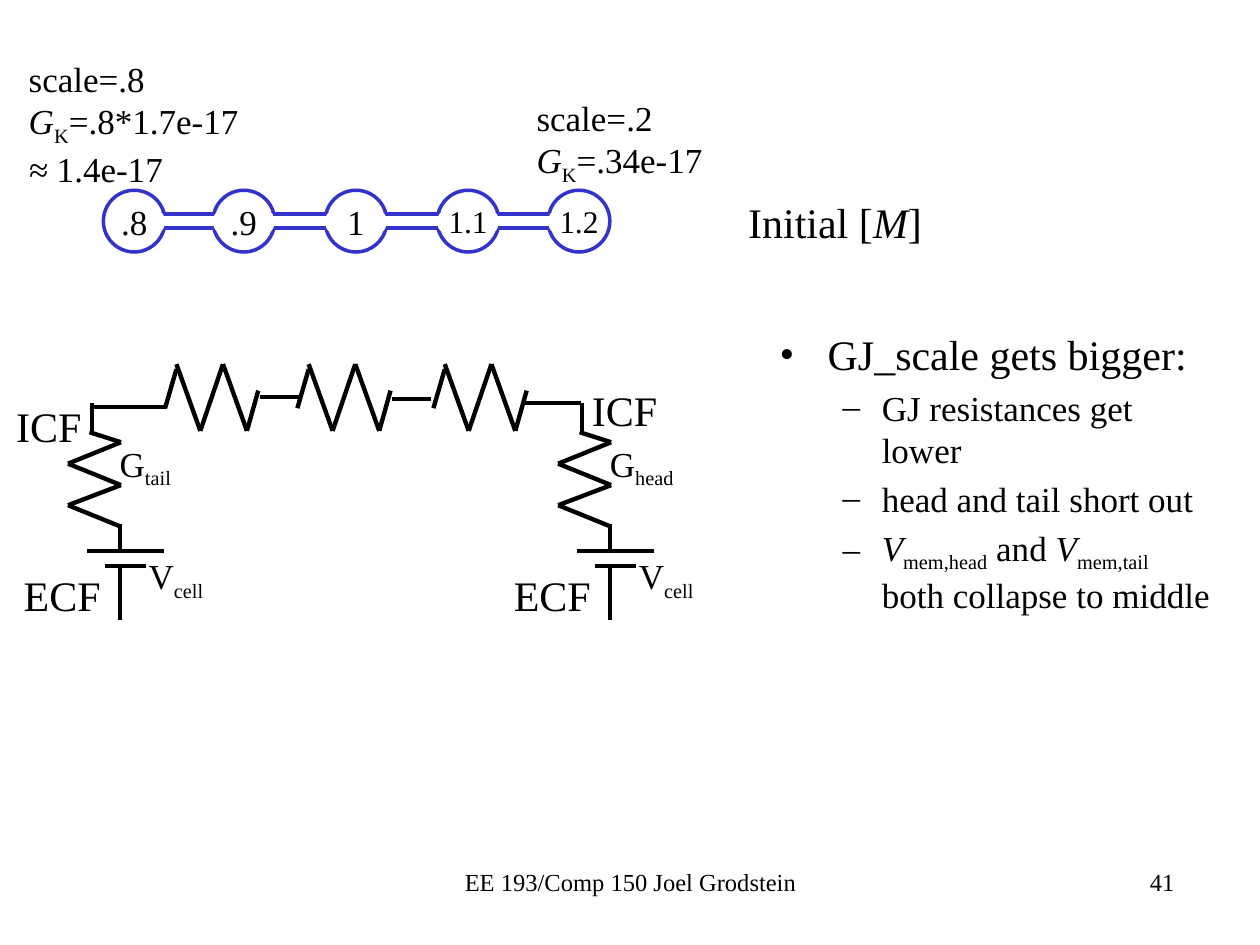
from dataclasses import dataclass
from itertools import pairwise

from lxml import etree
from pptx import Presentation
from pptx.dml.color import RGBColor
from pptx.enum.shapes import MSO_CONNECTOR, MSO_SHAPE
from pptx.enum.text import MSO_ANCHOR, PP_ALIGN
from pptx.oxml.ns import qn
from pptx.util import Inches, Pt

STRAIGHT = MSO_CONNECTOR.STRAIGHT
OVAL, RECTANGLE = MSO_SHAPE.OVAL, MSO_SHAPE.RECTANGLE
LEFT, CENTER, RIGHT = PP_ALIGN.LEFT, PP_ALIGN.CENTER, PP_ALIGN.RIGHT
MIDDLE = MSO_ANCHOR.MIDDLE

BLACK = RGBColor(0x00, 0x00, 0x00)
WHITE = RGBColor(0xFF, 0xFF, 0xFF)
BLUE = RGBColor(0x33, 0x33, 0xCC)
FONT = "Times New Roman"
WIRE, RESISTOR = 2.25, 2.5


@dataclass(frozen=True)
class Span:
    text: str
    italic: bool = False
    subscript: bool = False


@dataclass(frozen=True)
class Cell:
    label: str
    left: float
    size: int


@dataclass(frozen=True)
class Branch:
    """One end of the circuit: conductance, battery and its labels."""
    conductance: str
    conductance_width: float
    offset: float
    icf_left: float
    icf_top: float


@dataclass(frozen=True)
class Bullet:
    spans: list[Span]
    level: int = 1
    size: int = 20


CELLS = [Cell(".8", 0.82, 20), Cell(".9", 1.69, 20), Cell("1", 2.58, 20),
         Cell("1.1", 3.47, 18), Cell("1.2", 4.35, 18)]
CELL_SIZE, CELL_TOP = 0.49, 1.51
BRIDGE_LEFTS = [1.23, 2.13, 3.01, 3.91]

BRANCHES = [Branch("tail", 0.44, 0, 0.03, 3.13),
            Branch("head", 0.55, 3.89, 4.6, 3)]
BRANCH_ZIGZAG = [(0.71, 3.43), (0.96, 3.51), (0.54, 3.68), (0.96, 3.85),
                 (0.54, 4.01), (0.96, 4.18)]
BRANCH_WIRES = [(0.69, 4.37, 1.3, 4.37), (0.83, 4.49, 1.16, 4.49),
                (0.95, 4.5, 0.95, 4.92), (0.95, 4.16, 0.95, 4.38),
                (0.73, 3.2, 0.73, 3.42)]

GAP_RESISTOR_LEFTS = [1.31, 2.36, 3.44]
GAP_RESISTOR_TOP = 2.89
GAP_RESISTOR_LINES = [(0, 0.35, 0.09, 0.04), (0.09, 0, 0.28, 0.53),
                      (0.28, 0.53, 0.46, 0), (0.46, 0, 0.65, 0.53),
                      (0.65, 0.53, 0.74, 0.21)]
GAP_WIRES = [(0.73, 3.23, 1.32, 3.23), (2.06, 3.15, 2.38, 3.15),
             (3.11, 3.17, 3.42, 3.17), (4.17, 3.2, 4.61, 3.2)]

BULLETS = [
    Bullet([Span("GJ_scale gets bigger:")], 0, 24),
    Bullet([Span("GJ resistances get lower")]),
    Bullet([Span("head and tail short out")]),
    Bullet([Span("V", italic=True), Span("mem,head", subscript=True),
            Span(" and "), Span("V", italic=True),
            Span("mem,tail", subscript=True),
            Span(" both collapse to middle")]),
]
BULLET_STYLES = [("•", 0.38, -0.38), ("–", 0.81, -0.31)]


def add_spans(paragraph, spans: list[Span], size: int) -> None:
    for span in spans:
        run = paragraph.add_run()
        run.text = span.text
        run.font.name = FONT
        run.font.size = Pt(size)
        run.font.italic = span.italic
        run.font.color.rgb = BLACK
        if span.subscript:
            run._r.get_or_add_rPr().set("baseline", "-25000")


def remove_margins(frame) -> None:
    frame.margin_left = frame.margin_right = 0
    frame.margin_top = frame.margin_bottom = 0


def add_text(shapes, left: float, top: float, width: float, height: float,
             lines: list[list[Span]], size: int, align=LEFT,
             tight: bool = False) -> None:
    """Add a text box; a tight one has no margins and does not wrap."""
    box = shapes.add_textbox(Inches(left), Inches(top), Inches(width), Inches(height))
    frame = box.text_frame
    frame.word_wrap = not tight
    if tight:
        remove_margins(frame)
    for index, spans in enumerate(lines):
        paragraph = frame.add_paragraph() if index else frame.paragraphs[0]
        paragraph.alignment = align
        add_spans(paragraph, spans, size)


def add_line(shapes, x1: float, y1: float, x2: float, y2: float,
             weight: float) -> None:
    line = shapes.add_connector(STRAIGHT, Inches(x1), Inches(y1), Inches(x2), Inches(y2))
    line.line.color.rgb = BLACK
    line.line.width = Pt(weight)
    etree.SubElement(line._element.spPr, qn("a:effectLst"))


def add_outline(shapes, kind, left: float, top: float, width: float,
                height: float, fill=None, line=None):
    shape = shapes.add_shape(kind, Inches(left), Inches(top), Inches(width), Inches(height))
    shape.shadow.inherit = False
    if fill is None:
        shape.fill.background()
    else:
        shape.fill.solid()
        shape.fill.fore_color.rgb = fill
    if line is None:
        shape.line.fill.background()
    else:
        shape.line.color.rgb = line
        shape.line.width = Pt(2)
    return shape


def add_cell_chain(shapes) -> None:
    for cell in CELLS:
        circle = add_outline(shapes, OVAL, cell.left, CELL_TOP, CELL_SIZE,
                             CELL_SIZE, line=BLUE)
        frame = circle.text_frame
        remove_margins(frame)
        frame.vertical_anchor = MIDDLE
        frame.paragraphs[0].alignment = CENTER
        add_spans(frame.paragraphs[0], [Span(cell.label)], cell.size)
    for bridge_left, (cell, neighbor) in zip(BRIDGE_LEFTS, pairwise(CELLS)):
        add_outline(shapes, RECTANGLE, bridge_left, 1.7, 0.52, 0.11, WHITE, BLUE)
        for opening_left in (cell.left + CELL_SIZE - 0.13, neighbor.left):
            add_outline(shapes, OVAL, opening_left, 1.67, 0.13, 0.18, WHITE)


def add_branch(shapes, branch: Branch) -> None:
    group = shapes.add_group_shape().shapes
    dx = branch.offset
    for x1, y1, x2, y2 in BRANCH_WIRES:
        add_line(group, x1 + dx, y1, x2 + dx, y2, WIRE)
    for (x1, y1), (x2, y2) in pairwise(BRANCH_ZIGZAG):
        add_line(group, x1 + dx, y1, x2 + dx, y2, RESISTOR)
    add_text(group, 1.18 + dx, 4.4, 0.47, 0.34,
             [[Span("V"), Span("cell", subscript=True)]], 20, tight=True)
    add_text(group, 0.95 + dx, 3.51, branch.conductance_width, 0.34,
             [[Span("G"), Span(branch.conductance, subscript=True)]], 20, tight=True)
    add_text(group, 0.09 + dx, 4.47, 0.87, 0.5, [[Span("ECF")]], 24)
    add_text(group, branch.icf_left, branch.icf_top, 0.87, 0.5, [[Span("ICF")]], 24)


def add_gap_resistor(shapes, left: float) -> None:
    group = shapes.add_group_shape().shapes
    for x1, y1, x2, y2 in GAP_RESISTOR_LINES:
        add_line(group, left + x1, GAP_RESISTOR_TOP + y1,
                 left + x2, GAP_RESISTOR_TOP + y2, RESISTOR)


def add_bullets(shapes) -> None:
    box = shapes.add_textbox(Inches(6.09), Inches(2.56), Inches(3.67), Inches(2.65))
    frame = box.text_frame
    frame.word_wrap = True
    for index, bullet in enumerate(BULLETS):
        paragraph = frame.add_paragraph() if index else frame.paragraphs[0]
        paragraph.level = bullet.level
        paragraph.space_before = Pt(bullet.size * 0.2)
        mark, margin, indent = BULLET_STYLES[bullet.level]
        properties = paragraph._p.get_or_add_pPr()
        properties.set("marL", str(Inches(margin)))
        properties.set("indent", str(Inches(indent)))
        etree.SubElement(properties, qn("a:buFont"), typeface=FONT)
        etree.SubElement(properties, qn("a:buChar"), char=mark)
        add_spans(paragraph, bullet.spans, bullet.size)


def main() -> None:
    presentation = Presentation()
    presentation.slide_width, presentation.slide_height = Inches(10), Inches(7.5)
    shapes = presentation.slides.add_slide(presentation.slide_layouts[6]).shapes
    conductance = [Span("G", italic=True), Span("K", subscript=True)]

    add_text(shapes, 6.25, 6.83, 3.17, 0.5, [[Span("41")]], 14, RIGHT)
    add_text(shapes, 3.42, 6.83, 3.17, 0.34,
             [[Span("EE 193/Comp 150 Joel Grodstein")]], 14, CENTER)
    add_cell_chain(shapes)
    add_text(shapes, 5.84, 1.51, 1.7, 0.5,
             [[Span("Initial ["), Span("M", italic=True), Span("]")]], 24)
    add_text(shapes, 0.13, 0.41, 1.96, 1.11,
             [[Span("scale=.8")], [*conductance, Span("=.8*1.7e-17")],
              [Span("≈ ", italic=True), Span("1.4e-17")]], 20)
    add_text(shapes, 4.16, 0.72, 1.62, 0.77,
             [[Span("scale=.2")], [*conductance, Span("=.34e-17")]], 20)
    add_bullets(shapes)
    for branch in BRANCHES:
        add_branch(shapes, branch)
    for left in GAP_RESISTOR_LEFTS:
        add_gap_resistor(shapes, left)
    for wire in GAP_WIRES:
        add_line(shapes, *wire, WIRE)
    presentation.save("out.pptx")


if __name__ == "__main__":
    main()
